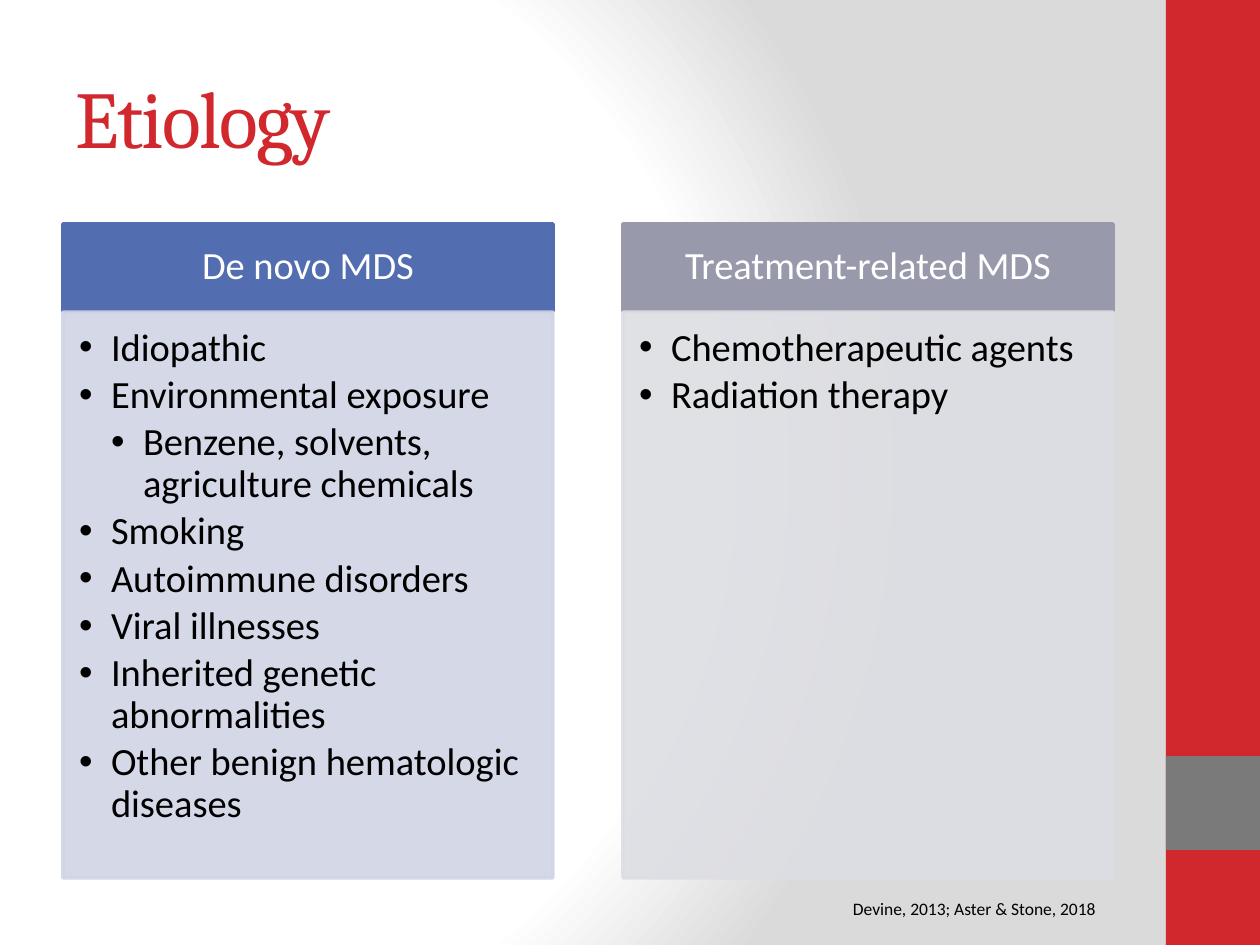
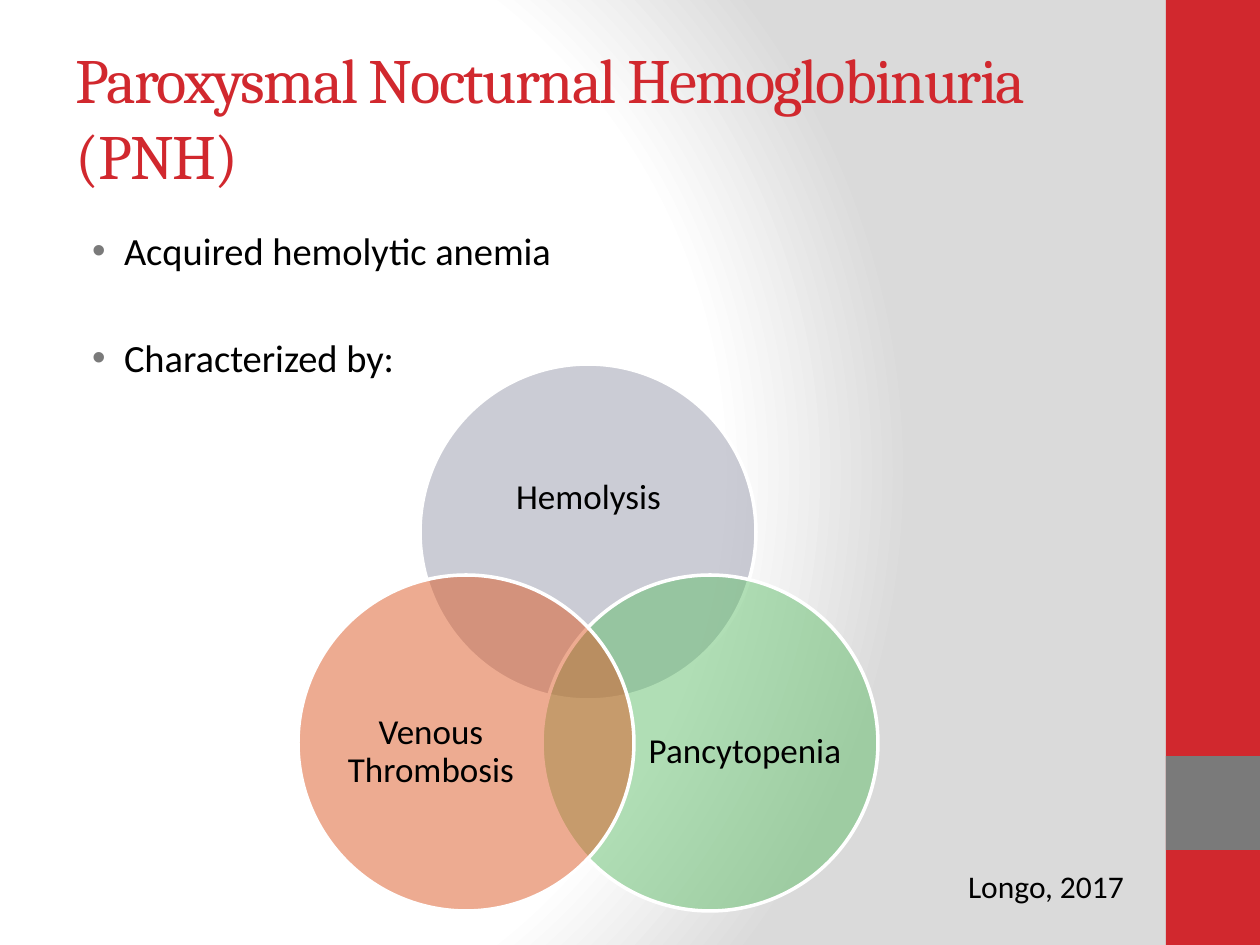
from dataclasses import dataclass

from lxml import etree
from pptx import Presentation
from pptx.dml.color import RGBColor
from pptx.enum.shapes import MSO_SHAPE
from pptx.enum.text import MSO_ANCHOR, MSO_AUTO_SIZE, PP_ALIGN
from pptx.oxml import parse_xml
from pptx.oxml.ns import nsdecls, qn
from pptx.util import Emu, Pt

RECTANGLE, OVAL = MSO_SHAPE.RECTANGLE, MSO_SHAPE.OVAL
TOP, MIDDLE = MSO_ANCHOR.TOP, MSO_ANCHOR.MIDDLE
LEFT, CENTER = PP_ALIGN.LEFT, PP_ALIGN.CENTER
NO_AUTOFIT = MSO_AUTO_SIZE.NONE

PX_PER_INCH = 126
SLIDE_WIDTH, SLIDE_HEIGHT = 1260, 945
CONTENT_LAYOUT, COMPARISON_LAYOUT = 1, 4

MARGIN, CONTENT_WIDTH = 63, 1050
BAND_LEFT, BAND_WIDTH = 1166, 94
CARD_WIDTH, CARD_STEP, CARD_TOP = 490, 560, 224
HEADER_HEIGHT, LIST_TOP, LIST_HEIGHT = 87, 312, 566
LIST_INDENT = 32
CIRCLE_SIZE = 336
DEFAULT_INSETS = (13, 6, 13, 6)


@dataclass(frozen=True)
class Theme:
    title_font: str = "Cambria"
    body_font: str = "Calibri"
    red: str = "D1282E"
    gray: str = "7A7A7A"
    white: str = "FFFFFF"
    black: str = "000000"
    backdrop: str = "DADADA"
    blue: str = "526DB0"
    pale_blue: str = "D1D4E4"
    slate: str = "989AAC"
    pale_slate: str = "DDDEE3"
    green: str = "63BF6C"
    orange: str = "DC5924"
    title_size: int = 46
    long_title_size: int = 36
    body_size: int = 22
    label_size: int = 20
    citation_size: int = 18
    small_citation_size: int = 10
    line_width: int = 2


THEME = Theme()


def px(length):
    return Emu(round(length * 914400 / PX_PER_INCH))


def place(shape, left, top, width, height):
    shape.left, shape.top = px(left), px(top)
    shape.width, shape.height = px(width), px(height)


def paint(shape, fill, line=None):
    shape.fill.solid()
    shape.fill.fore_color.rgb = RGBColor.from_string(fill)
    if line:
        shape.line.color.rgb = RGBColor.from_string(line)
        shape.line.width = Pt(THEME.line_width)
    else:
        shape.line.fill.background()


def set_opacity(color_parent, percent):
    """Apply the opacity to every colour below the given XML element."""
    for color in color_parent.iter(qn("a:srgbClr")):
        etree.SubElement(color, qn("a:alpha")).set("val", str(percent * 1000))


def set_frame(shape, anchor=TOP, insets=DEFAULT_INSETS):
    frame = shape.text_frame
    frame.word_wrap = True
    frame.auto_size = NO_AUTOFIT
    frame.vertical_anchor = anchor
    (frame.margin_left, frame.margin_top,
     frame.margin_right, frame.margin_bottom) = map(px, insets)
    return frame


def write(paragraph, text, size, color=THEME.black, font=THEME.body_font,
          align=LEFT, line_spacing=1.0, before=0, after=0):
    paragraph.alignment = align
    paragraph.line_spacing = line_spacing
    paragraph.space_before, paragraph.space_after = Pt(before), Pt(after)
    run = paragraph.add_run()
    run.text = text
    run.font.name, run.font.size, run.font.bold = font, Pt(size), False
    run.font.color.rgb = RGBColor.from_string(color)
    return run


def add_bullet(paragraph, margin, color):
    properties = paragraph._p.get_or_add_pPr()
    properties.set("marL", str(px(margin)))
    properties.set("indent", str(-px(LIST_INDENT)))
    bullet_color = etree.SubElement(properties, qn("a:buClr"))
    etree.SubElement(bullet_color, qn("a:srgbClr")).set("val", color)
    etree.SubElement(properties, qn("a:buFont")).set("typeface", "Arial")
    etree.SubElement(properties, qn("a:buChar")).set("char", "•")


def next_paragraph(frame, index):
    return frame.add_paragraph() if index else frame.paragraphs[0]


def set_title(slide, text, size):
    title = slide.shapes.title
    place(title, MARGIN, 38, CONTENT_WIDTH, 157)
    frame = set_frame(title, MIDDLE)
    run = write(frame.paragraphs[0], text, size, THEME.red, THEME.title_font)
    run._r.get_or_add_rPr().set("spc", "-100")


def add_citation(slide, text, size, left, top, width, height):
    box = slide.shapes.add_textbox(px(left), px(top), px(width), px(height))
    write(set_frame(box).paragraphs[0], text, size)


def set_master_background(master):
    stops = "".join(
        f'<a:gs pos="{position * 1000}"><a:srgbClr val="{color}"/></a:gs>'
        for position, color in ((0, THEME.white), (75, THEME.white), (100, THEME.backdrop)))
    background = parse_xml(
        f'<p:bg {nsdecls("p", "a")}><p:bgPr>'
        f'<a:gradFill rotWithShape="1"><a:gsLst>{stops}</a:gsLst>'
        '<a:path path="circle"><a:fillToRect l="20000" t="50000" r="100000" b="50000"/>'
        '</a:path></a:gradFill><a:effectLst/></p:bgPr></p:bg>')
    slide_data = master.element.find(qn("p:cSld"))
    for previous in slide_data.findall(qn("p:bg")):
        slide_data.remove(previous)
    slide_data.insert(0, background)


def add_master_bands(master, slide):
    """Build the side bands on a slide, then move them behind the master's content."""
    bands = ((0, SLIDE_HEIGHT, THEME.red), (756, BAND_WIDTH, THEME.gray))
    for index, (top, height, color) in enumerate(bands):
        band = slide.shapes.add_shape(
            RECTANGLE, px(BAND_LEFT), px(top), px(BAND_WIDTH), px(height))
        band.shadow.inherit = False
        paint(band, color)
        band.element.nvSpPr.cNvPr.set("id", str(100 + index))
        master.shapes.element.insert(2 + index, band.element)


def fill_card(header, body, column, heading, items, header_color, body_color):
    left = MARGIN + column * CARD_STEP
    place(header, left, CARD_TOP, CARD_WIDTH, HEADER_HEIGHT)
    paint(header, header_color, header_color)
    frame = set_frame(header, MIDDLE, (21, 13, 21, 13))
    write(frame.paragraphs[0], heading, THEME.body_size, THEME.white,
          align=CENTER, line_spacing=0.9)

    place(body, left, LIST_TOP, CARD_WIDTH, LIST_HEIGHT)
    paint(body, body_color, body_color)
    set_opacity(body.element.spPr, 90)
    frame = set_frame(body, TOP, (16, 16, 21, 24))
    for index, (level, text) in enumerate(items):
        paragraph = next_paragraph(frame, index)
        paragraph.level = level
        write(paragraph, text, THEME.body_size, line_spacing=0.9, after=3.3)
        add_bullet(paragraph, LIST_INDENT * (level + 1), THEME.black)


def add_venn_circle(slide, center_x, center_y, color, label, label_box):
    circle = slide.shapes.add_shape(
        OVAL, px(center_x - CIRCLE_SIZE // 2), px(center_y - CIRCLE_SIZE // 2),
        px(CIRCLE_SIZE), px(CIRCLE_SIZE))
    circle.shadow.inherit = False
    paint(circle, color, THEME.white)
    set_opacity(circle.element.spPr.find(qn("a:solidFill")), 50)
    box = slide.shapes.add_textbox(*map(px, label_box))
    frame = set_frame(box, MIDDLE, (0, 0, 0, 0))
    write(frame.paragraphs[0], label, THEME.label_size, align=CENTER, line_spacing=0.9)


def build_etiology(slide):
    set_title(slide, "Etiology", THEME.title_size)
    cards = (
        ("De novo MDS",
         ((0, "Idiopathic"),
          (0, "Environmental exposure"),
          (1, "Benzene, solvents, agriculture chemicals"),
          (0, "Smoking"),
          (0, "Autoimmune disorders"),
          (0, "Viral illnesses"),
          (0, "Inherited genetic abnormalities"),
          (0, "Other benign hematologic diseases")),
         THEME.blue, THEME.pale_blue),
        ("Treatment-related MDS",
         ((0, "Chemotherapeutic agents"),
          (0, "Radiation therapy")),
         THEME.slate, THEME.pale_slate),
    )
    for column, card in enumerate(cards):
        header, body = (slide.placeholders[2 * column + offset] for offset in (1, 2))
        fill_card(header, body, column, *card)
    add_citation(slide, "Devine, 2013; Aster & Stone, 2018",
                 THEME.small_citation_size, 840, 892, 284, 34)


def build_hemoglobinuria(slide):
    set_title(slide, "Paroxysmal Nocturnal Hemoglobinuria (PNH)", THEME.long_title_size)
    body = slide.placeholders[1]
    place(body, MARGIN, 221, CONTENT_WIDTH, 661)
    frame = set_frame(body)
    for index, text in enumerate(("Acquired hemolytic anemia", "Characterized by:")):
        paragraph = next_paragraph(frame, index)
        write(paragraph, text, THEME.body_size, before=35 * index)
        add_bullet(paragraph, 48, THEME.gray)

    middle, spread, upper, lower = 588, 122, 532, 743
    add_venn_circle(slide, middle, upper, THEME.slate,
                    "Hemolysis", (465, 423, 247, 151))
    add_venn_circle(slide, middle + spread, lower, THEME.green,
                    "Pancytopenia", (644, 660, 202, 185))
    add_venn_circle(slide, middle - spread, lower, THEME.orange,
                    "Venous Thrombosis", (330, 660, 202, 185))
    add_citation(slide, "Longo, 2017", THEME.citation_size, 955, 861, 210, 50)


def main():
    presentation = Presentation()
    presentation.slide_width, presentation.slide_height = px(SLIDE_WIDTH), px(SLIDE_HEIGHT)
    layouts = presentation.slide_layouts
    etiology = presentation.slides.add_slide(layouts[COMPARISON_LAYOUT])
    hemoglobinuria = presentation.slides.add_slide(layouts[CONTENT_LAYOUT])
    set_master_background(presentation.slide_master)
    add_master_bands(presentation.slide_master, etiology)
    build_etiology(etiology)
    build_hemoglobinuria(hemoglobinuria)
    presentation.save("out.pptx")


if __name__ == "__main__":
    main()
